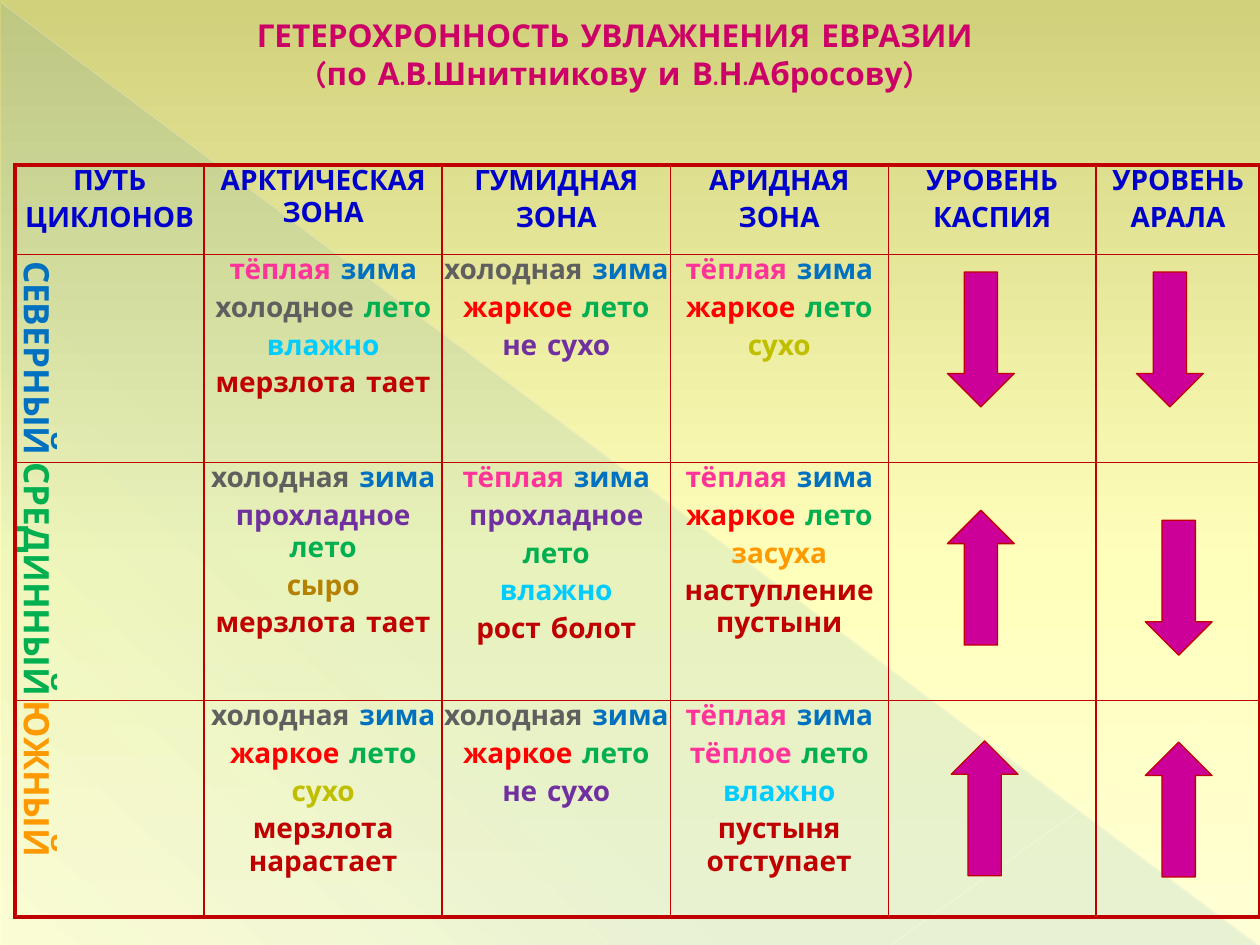
from lxml.etree import SubElement
from pptx import Presentation
from pptx.dml.color import RGBColor
from pptx.enum.shapes import MSO_CONNECTOR, MSO_SHAPE
from pptx.enum.text import MSO_ANCHOR, MSO_AUTO_SIZE, PP_ALIGN
from pptx.oxml.ns import qn
from pptx.util import Inches, Pt

FONT = "Comic Neue"
BORDER = "C00000"
SEASONS = {"зима": "0070C0", "лето": "00B050"}
TRAITS = {
    "тёплая": "FF3399", "тёплое": "FF3399",
    "холодная": "5F5F5F", "холодное": "5F5F5F",
    "жаркое": "FF0000", "прохладное": "7030A0", "не сухо": "7030A0",
    "влажно": "00CCFF", "сухо": "BFBF00", "сыро": "B48100", "засуха": "FF9900",
}
CONSEQUENCE = "C00000"

HEADINGS = ["ПУТЬ|ЦИКЛОНОВ", "АРКТИЧЕСКАЯ ЗОНА", "ГУМИДНАЯ|ЗОНА",
            "АРИДНАЯ|ЗОНА", "УРОВЕНЬ|КАСПИЯ", "УРОВЕНЬ|АРАЛА"]
# Cyclone path, its colour and alignment, then the climate of each zone
PATHS = [
    ("СЕВЕРНЫЙ", "0070C0", PP_ALIGN.CENTER, [
        "тёплая зима|холодное лето|влажно|мерзлота тает",
        "холодная зима|жаркое лето|не сухо",
        "тёплая зима|жаркое лето|сухо"]),
    ("СРЕДИННЫЙ", "00B050", PP_ALIGN.LEFT, [
        "холодная зима|прохладное лето|сыро|мерзлота тает",
        "тёплая зима|прохладное|лето|влажно|рост болот",
        "тёплая зима|жаркое лето|засуха|наступление пустыни"]),
    ("ЮЖНЫЙ", "FF9900", PP_ALIGN.LEFT, [
        "холодная зима|жаркое лето|сухо|мерзлота нарастает",
        "холодная зима|жаркое лето|не сухо",
        "тёплая зима|тёплое лето|влажно|пустыня отступает"]),
]
COLUMNS = [1.5, 1.89, 1.81, 1.73, 1.65, 1.3]
ROWS = [0.71, 1.65, 1.89, 1.72]
# Lake level change: offset from the table corner and direction
DOWN, UP = MSO_SHAPE.DOWN_ARROW, MSO_SHAPE.UP_ARROW
LEVELS = [(7.4, 0.85, DOWN), (8.9, 0.85, DOWN),
          (7.4, 2.74, UP), (8.97, 2.82, DOWN),
          (7.43, 4.57, UP), (8.97, 4.58, UP)]


def rgb(value):
    return RGBColor.from_string(value)


def set_alpha(parent, percent):
    for color in parent.iter(qn("a:srgbClr")):
        SubElement(color, qn("a:alpha"), val=str(percent * 1000))


def set_gradient(fill, owner, angle, stops):
    """Fill with (position, colour, opacity) stops; the angle runs clockwise."""
    fill.gradient()
    fill.gradient_angle = 360 - angle
    stop_list = next(owner.iter(qn("a:gsLst")))
    for old_stop in list(stop_list):
        stop_list.remove(old_stop)
    for position, color, opacity in stops:
        stop = SubElement(stop_list, qn("a:gs"), pos=str(position * 1000))
        SubElement(stop, qn("a:srgbClr"), val=color)
        if opacity < 100:
            set_alpha(stop, opacity)


def write_paragraphs(frame, lines, size, align, space=0):
    """Write each line as a list of (text, colour) runs."""
    for index, pieces in enumerate(lines):
        paragraph = frame.paragraphs[0] if index == 0 else frame.add_paragraph()
        paragraph.alignment = align
        if index and space:
            paragraph.space_before = Pt(space)
        font = paragraph.font
        font.name, font.size, font.bold = FONT, Pt(size), True
        if len(pieces) == 1:
            font.color.rgb = rgb(pieces[0][1])
        for text, color in pieces:
            run = paragraph.add_run()
            run.text = text
            if len(pieces) > 1:
                run.font.color.rgb = rgb(color)


def climate_pieces(line):
    """Colour the season apart from its trait."""
    trait, gap, season = line.rpartition(" ")
    if season not in SEASONS:
        return [(line, TRAITS.get(line, CONSEQUENCE))]
    pieces = [(trait + gap, TRAITS[trait])] if trait else []
    return pieces + [(season, SEASONS[season])]


def add_backdrop(slide, left, top, width, height):
    set_gradient(slide.background.fill, slide.element, 90,
                 [(0, "D1D17C", 100), (60, "FFFFBC", 100), (100, "FFFFD5", 100)])
    # Translucent wedge
    wedge = slide.shapes.add_shape(MSO_SHAPE.RIGHT_TRIANGLE, left, top, width, height)
    wedge.shadow.inherit = False
    wedge.line.fill.background()
    set_gradient(wedge.fill, wedge.element, 133,
                 [(0, "0070C0", 10), (70, "0070C0", 8), (100, "0070C0", 1)])
    # Hairlines along the wedge and across the lower right corner
    right, bottom = left + width, top + height
    for start, end, color, weight, opacity in [
            ((left, top), (right, bottom), "FFFFE5", 0.39, 35),
            ((right, top + Inches(5.39)), (left + Inches(7.06), bottom),
             "FFFFE7", 0.47, 45)]:
        hairline = slide.shapes.add_connector(MSO_CONNECTOR.STRAIGHT, *start, *end)
        hairline.line.color.rgb = rgb(color)
        hairline.line.width = Pt(weight)
        set_alpha(hairline.element, opacity)
        SubElement(hairline.element.spPr, qn("a:effectLst"))


def add_heading(slide, left, top, width, height):
    heading = slide.shapes.title
    slide.shapes.element.append(heading.element)  # in front of the backdrop
    heading.left, heading.top, heading.width, heading.height = left, top, width, height
    frame = heading.text_frame
    frame.word_wrap = False
    frame.auto_size = MSO_AUTO_SIZE.SHAPE_TO_FIT_TEXT
    frame.vertical_anchor = MSO_ANCHOR.TOP
    write_paragraphs(frame, [[(line, "CC0066")] for line in (
        "ГЕТЕРОХРОННОСТЬ УВЛАЖНЕНИЯ ЕВРАЗИИ",
        "(по А.В.Шнитникову и В.Н.Абросову)")], 18, PP_ALIGN.CENTER)


def format_cell(cell, row, column):
    """Clear the fill and margins; the outer border is thicker."""
    cell.fill.background()
    cell.margin_left = cell.margin_right = cell.margin_top = cell.margin_bottom = 0
    properties = cell._tc.get_or_add_tcPr()
    outer_sides = [("a:lnL", column == 0), ("a:lnR", column == len(COLUMNS) - 1),
                   ("a:lnT", row == 0), ("a:lnB", row == len(ROWS) - 1)]
    for index, (side, is_outer) in enumerate(outer_sides):
        border = SubElement(properties, qn(side), w=str(Pt(2.25 if is_outer else 1)))
        SubElement(SubElement(border, qn("a:solidFill")), qn("a:srgbClr"), val=BORDER)
        properties.insert(index, border)


def add_climate_table(slide, left, top, width, height):
    table = slide.shapes.add_table(len(ROWS), len(COLUMNS),
                                   left, top, width, height).table
    table.first_row = table.horz_banding = False
    for column, size in zip(table.columns, COLUMNS):
        column.width = Inches(size)
    for row, size in zip(table.rows, ROWS):
        row.height = Inches(size)
    for row in range(len(ROWS)):
        for column in range(len(COLUMNS)):
            format_cell(table.cell(row, column), row, column)

    # Column headings
    for column, heading in enumerate(HEADINGS):
        write_paragraphs(table.cell(0, column).text_frame,
                         [[(line, "0000CC")] for line in heading.split("|")],
                         16, PP_ALIGN.CENTER, 3.2)
    # Path names turned clockwise, and climate of the zones
    for row, (name, color, align, zones) in enumerate(PATHS, 1):
        name_cell = table.cell(row, 0)
        name_cell.vertical_anchor = MSO_ANCHOR.MIDDLE
        name_cell._tc.get_or_add_tcPr().set("vert", "vert")
        write_paragraphs(name_cell.text_frame, [[(name, color)]], 20, align)
        for column, climate in enumerate(zones, 1):
            write_paragraphs(table.cell(row, column).text_frame,
                             [climate_pieces(line) for line in climate.split("|")],
                             16, PP_ALIGN.CENTER, 3.2)


def add_level_arrows(slide, left, top):
    for x, y, direction in LEVELS:
        arrow = slide.shapes.add_shape(direction, left + Inches(x), top + Inches(y),
                                       Inches(0.53), Inches(1.07))
        arrow.shadow.inherit = False
        arrow.fill.solid()
        arrow.fill.fore_color.rgb = rgb("CC0099")
        arrow.line.color.rgb = rgb(BORDER)
        arrow.line.width = Pt(0.75)


def main():
    presentation = Presentation()
    presentation.slide_width, presentation.slide_height = Inches(10), Inches(7.5)
    slide = presentation.slides.add_slide(presentation.slide_layouts[5])
    add_backdrop(slide, Inches(0.01), Inches(0.02), Inches(9.98), Inches(7.48))
    add_heading(slide, Inches(1.85), Inches(0.08), Inches(6.06), Inches(0.71))
    table_left, table_top = Inches(0.12), Inches(1.31)
    add_climate_table(slide, table_left, table_top,
                      Inches(sum(COLUMNS)), Inches(sum(ROWS)))
    add_level_arrows(slide, table_left, table_top)
    presentation.save("out.pptx")


if __name__ == "__main__":
    main()
